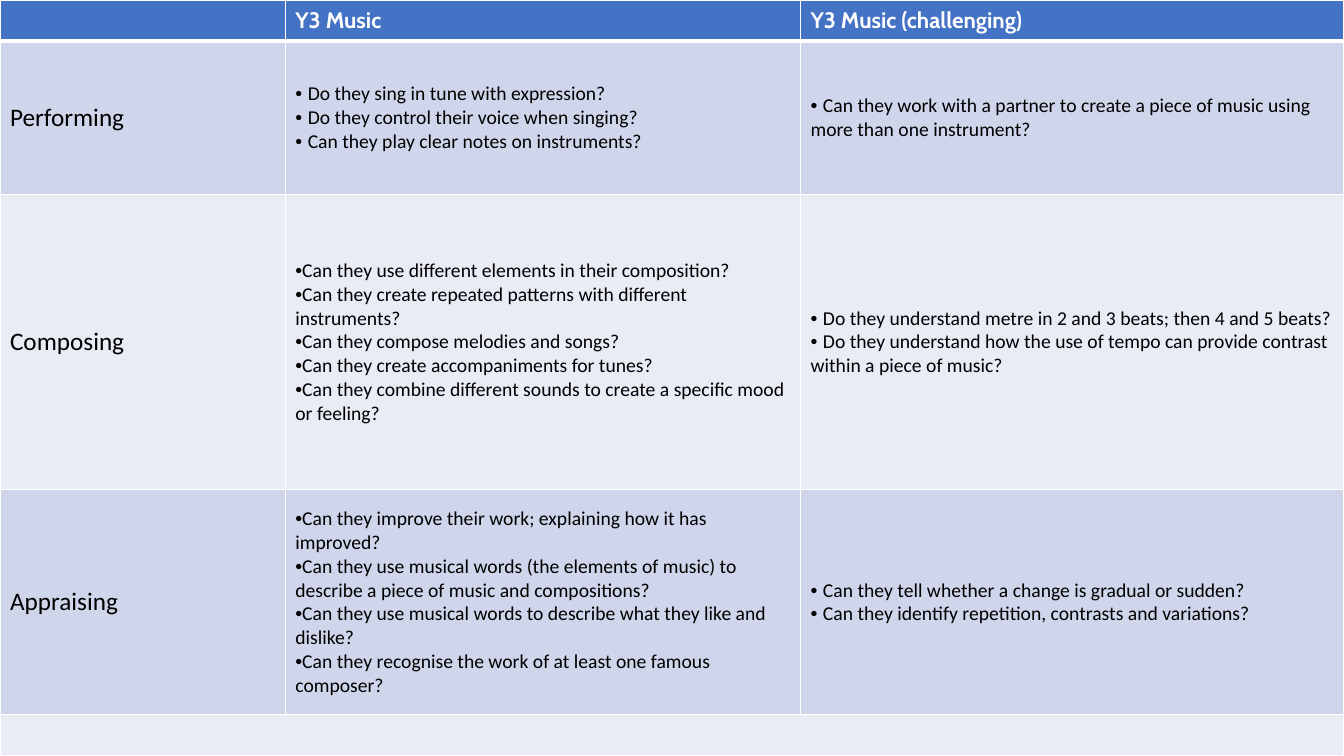
from lxml.etree import SubElement
from pptx import Presentation
from pptx.dml.color import RGBColor
from pptx.enum.text import MSO_ANCHOR
from pptx.oxml import parse_xml
from pptx.oxml.ns import nsdecls, qn
from pptx.util import Inches, Pt

COLOURS = {"header": "4472C4", "odd": "CFD5EA", "even": "E9EBF5",
           "line": "FFFFFF", "light": "FFFFFF", "dark": "000000"}
SLIDE = (13.33, 7.5)
COLUMNS = [2.83, 5.11, 5.39]
ROWS = [0.41, 1.52, 2.93, 2.23, 0.41]
FORMATS = {
    "header": {"name": "Cabin", "size": Pt(16), "bold": True},
    "topic": {"name": "Calibri", "size": Pt(18), "bold": False},
    "question": {"name": "Calibri", "size": Pt(14), "bold": False},
    "mark": {"name": "Arial", "size": Pt(14), "bold": False},
}
HEADINGS = ["", "Y3 Music", "Y3 Music (challenging)"]
TOPICS = [
    ("Performing", "typed",
     ["Do they sing in tune with expression?\nDo they control their voice when singing?",
      "Can they play clear notes on instruments?"],
     ["Can they work with a partner to create a piece of music using more than one instrument?"]),
    ("Composing", "bullet",
     ["Can they use different elements in their composition?",
      "Can they create repeated patterns with different instruments?",
      "Can they compose melodies and songs?",
      "Can they create accompaniments for tunes?",
      "Can they combine different sounds to create a specific mood or feeling?"],
     ["Do they understand metre in 2 and 3 beats; then 4 and 5 beats?\n"
      "Do they understand how the use of tempo can provide contrast within a piece of music?"]),
    ("Appraising", "bullet",
     ["Can they improve their work; explaining how it has improved?",
      "Can they use musical words (the elements of music) to describe a piece of music and compositions?",
      "Can they use musical words to describe what they like and dislike?",
      "Can they recognise the work of at least one famous composer?"],
     ["Can they tell whether a change is gradual or sudden?",
      "Can they identify repetition, contrasts and variations?"]),
]


def add_span(para, text, style):
    span = para.add_run()
    span.text = text
    for attribute, value in FORMATS[style].items():
        setattr(span.font, attribute, value)
    colour = "light" if style == "header" else "dark"
    span.font.color.rgb = RGBColor.from_string(COLOURS[colour])


def add_bullet(para):
    properties = para._p.get_or_add_pPr()
    properties.set("marL", "0")
    properties.set("indent", "0")
    SubElement(properties, qn("a:buFont")).set("typeface", "Arial")
    SubElement(properties, qn("a:buChar")).set("char", "•")


def fill_questions(cell, questions, marking):
    frame = cell.text_frame
    for index, question in enumerate(questions):
        para = frame.add_paragraph() if index else frame.paragraphs[0]
        if marking == "bullet":
            add_bullet(para)
            add_span(para, question, "question")
            continue
        for position, line in enumerate(question.split("\n")):
            if position:
                para.add_line_break()
            add_span(para, "• ", "mark")
            add_span(para, line, "question")


def style_cell(cell, row):
    band = "header" if row == 0 else "odd" if row % 2 else "even"
    cell.vertical_anchor = MSO_ANCHOR.MIDDLE
    cell.fill.solid()
    cell.fill.fore_color.rgb = RGBColor.from_string(COLOURS[band])
    properties = cell._tc.get_or_add_tcPr()
    for index, side in enumerate("LRTB"):
        heavy = (row, side) in ((0, "B"), (1, "T"))
        properties.insert(index, parse_xml(
            f'<a:ln{side} {nsdecls("a")} w="{Pt(3 if heavy else 1)}"><a:solidFill>'
            f'<a:srgbClr val="{COLOURS["line"]}"/></a:solidFill></a:ln{side}>'))


def add_music_table(page, box):
    table = page.shapes.add_table(len(ROWS), len(COLUMNS), *map(Inches, box)).table
    for column, width in zip(table.columns, COLUMNS):
        column.width = Inches(width * box[2] / sum(COLUMNS))
    for row, height in zip(table.rows, ROWS):
        row.height = Inches(height * box[3] / sum(ROWS))
    for row in range(len(ROWS)):
        for column in range(len(COLUMNS)):
            style_cell(table.cell(row, column), row)
    for column, heading in enumerate(HEADINGS):
        if heading:
            add_span(table.cell(0, column).text_frame.paragraphs[0], heading, "header")
    for row, (topic, marking, core, challenging) in enumerate(TOPICS, start=1):
        add_span(table.cell(row, 0).text_frame.paragraphs[0], topic, "topic")
        fill_questions(table.cell(row, 1), core, marking)
        fill_questions(table.cell(row, 2), challenging, "typed")
    last = len(ROWS) - 1
    table.cell(last, 0).merge(table.cell(last, len(COLUMNS) - 1))


def main():
    deck = Presentation()
    deck.slide_width, deck.slide_height = map(Inches, SLIDE)
    page = deck.slides.add_slide(deck.slide_layouts[6])
    add_music_table(page, (0, 0, *SLIDE))
    deck.save("out.pptx")


if __name__ == "__main__":
    main()
